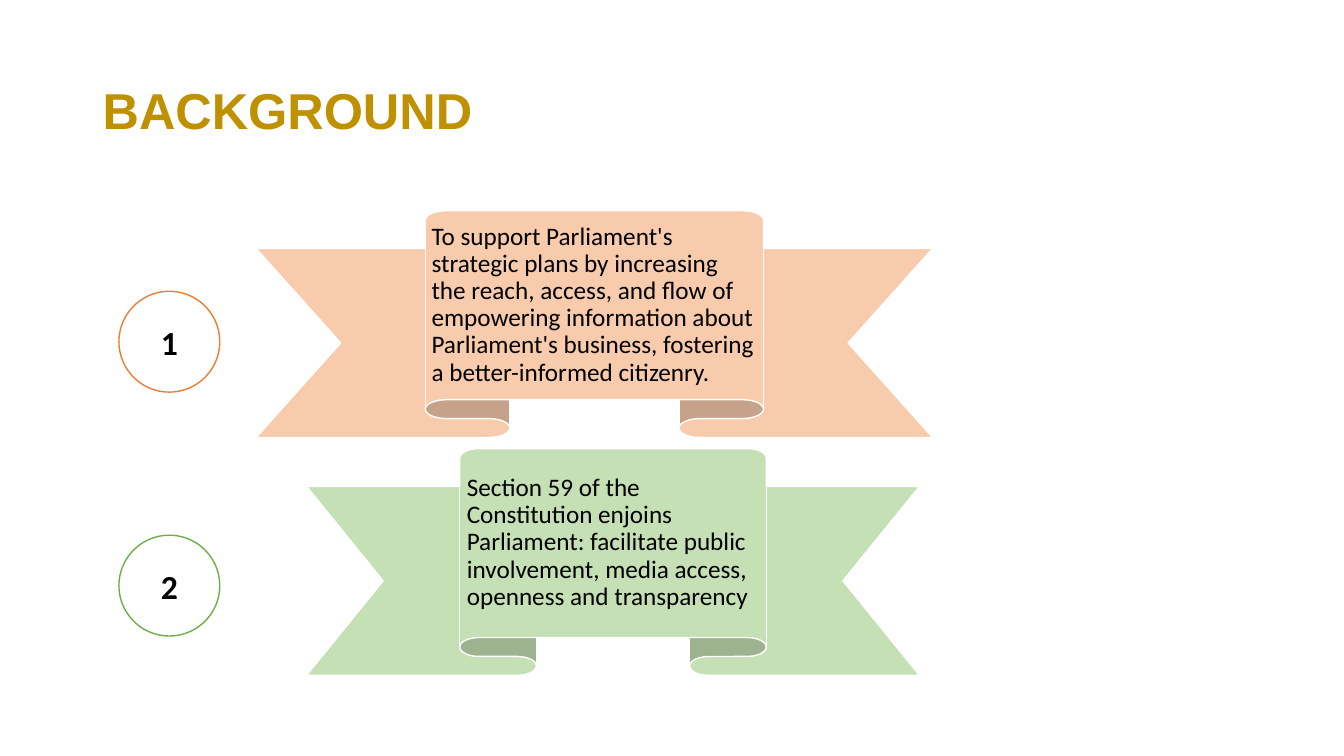
from pptx import Presentation
from pptx.dml.color import RGBColor
from pptx.enum.shapes import MSO_SHAPE
from pptx.enum.text import MSO_ANCHOR, PP_ALIGN
from pptx.util import Pt

PX = 9144  # EMU per px, at 100 px to the inch
RIBBON, CIRCLE = MSO_SHAPE.UP_RIBBON, MSO_SHAPE.OVAL
MIDDLE = MSO_ANCHOR.MIDDLE
LEFT, CENTER = PP_ALIGN.LEFT, PP_ALIGN.CENTER

RIBBON_H = 225
CIRCLE_X, CIRCLE_SIZE = 118, 100

# number, circle top, circle line, ribbon left, top and width, ribbon fill, text
POINTS = [
    ("1", 289, "ED7D31", 254, 209, 671, "F8CBAD",
     "To support Parliament's strategic plans by increasing the reach, access, "
     "and flow of empowering information about Parliament's business, "
     "fostering a better-informed citizenry."),
    ("2", 531, "70AD47", 304, 445, 608, "C5E0B4",
     "Section 59 of the Constitution enjoins Parliament: facilitate public "
     "involvement, media access, openness and transparency"),
]


def rgb(color):
    return RGBColor.from_string(color)


class Deck:
    font = "Calibri"
    ink = "000000"
    white = "FFFFFF"

    def __init__(self, width, height):
        self.prs = Presentation()
        self.prs.slide_width = width * PX
        self.prs.slide_height = height * PX
        self.s = self.prs.slides.add_slide(self.prs.slide_layouts[6])

    def set_text(self, sp, text, size, bold=False, color=ink, font=font,
                 align=LEFT, spacing=1.0, inset=None):
        tf = sp.text_frame
        tf.word_wrap = True
        tf.vertical_anchor = MIDDLE
        if inset is not None:
            tf.margin_left = tf.margin_right = inset * PX
            tf.margin_top = tf.margin_bottom = inset * PX
        p = tf.paragraphs[0]
        p.text = text
        p.alignment = align
        p.line_spacing = spacing
        p.font.name = font
        p.font.size = Pt(size)
        p.font.bold = bold
        p.font.color.rgb = rgb(color)

    def text(self, x, y, w, h, text, size, **style):
        sp = self.s.shapes.add_textbox(x * PX, y * PX, w * PX, h * PX)
        self.set_text(sp, text, size, **style)

    def shape(self, kind, x, y, w, h, fill, line):
        sp = self.s.shapes.add_shape(kind, x * PX, y * PX, w * PX, h * PX)
        sp.shadow.inherit = False
        sp.fill.solid()
        sp.fill.fore_color.rgb = rgb(fill)
        sp.line.color.rgb = rgb(line)
        sp.line.width = Pt(1)
        return sp

    def ribbon(self, x, y, w, h, fill, text):
        """Draw a ribbon with its text on the front panel, half as wide."""
        self.shape(RIBBON, x, y, w, h, fill, self.white)
        self.text(x + w // 4, y, w // 2, h * 5 // 6, text, 18,
                  spacing=0.9, inset=7)

    def circle(self, x, y, size, line, number):
        sp = self.shape(CIRCLE, x, y, size, size, self.white, line)
        self.set_text(sp, number, 24, bold=True, align=CENTER)


def main():
    deck = Deck(1333, 750)
    deck.text(92, 40, 997, 145, "BACKGROUND", 36, bold=True,
              color="BF9000", font="Arial", spacing=0.9)
    for number, top, line, x, y, w, fill, text in POINTS:
        deck.ribbon(x, y, w, RIBBON_H, fill, text)
        deck.circle(CIRCLE_X, top, CIRCLE_SIZE, line, number)
    deck.prs.save("out.pptx")


if __name__ == "__main__":
    main()
